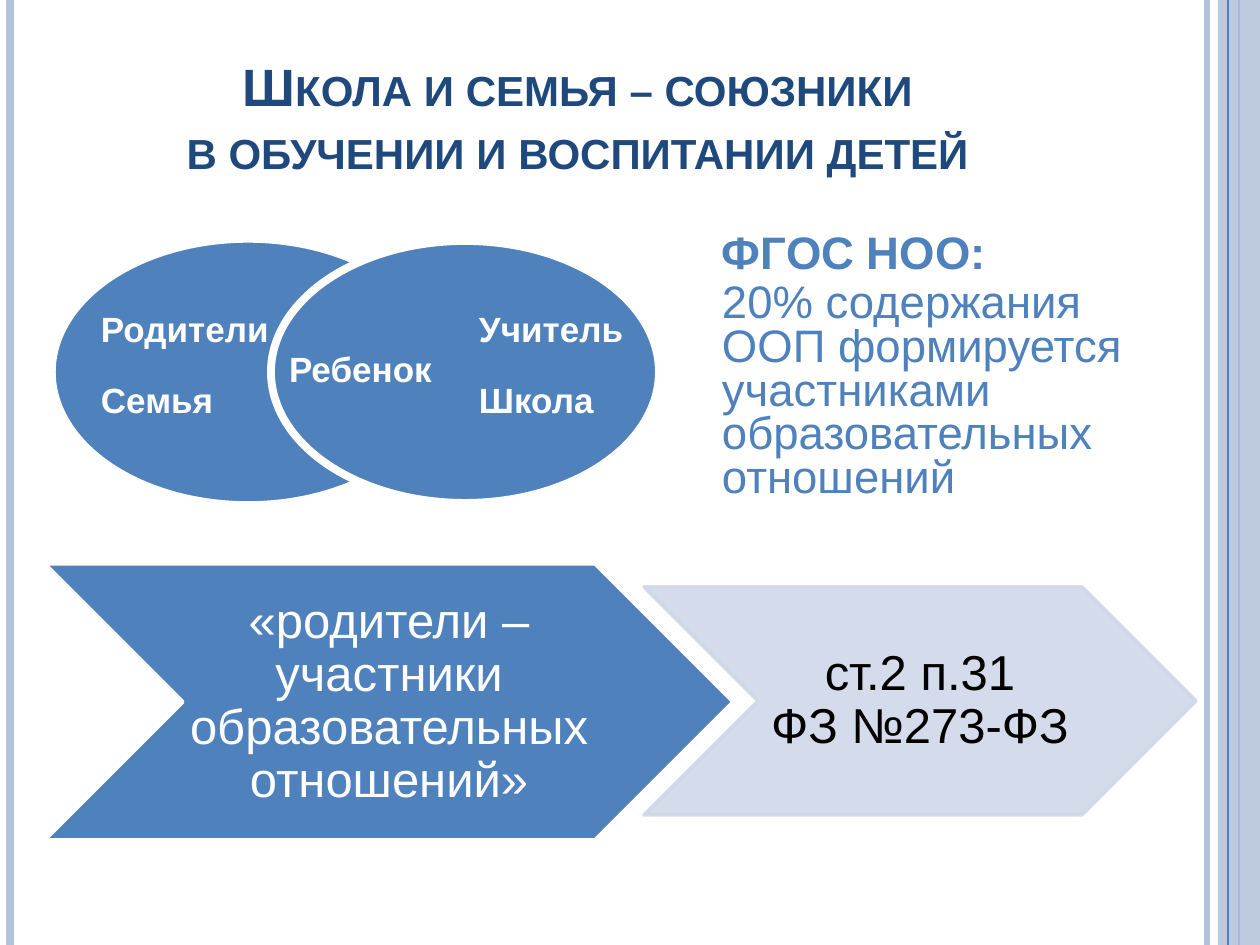
from lxml import etree
from pptx import Presentation
from pptx.dml.color import RGBColor
from pptx.enum.shapes import MSO_CONNECTOR, MSO_SHAPE
from pptx.enum.text import MSO_ANCHOR, PP_ALIGN
from pptx.oxml.ns import qn
from pptx.util import Pt

LEFT, CENTER = PP_ALIGN.LEFT, PP_ALIGN.CENTER
TOP, MIDDLE = MSO_ANCHOR.TOP, MSO_ANCHOR.MIDDLE
STRAIGHT = MSO_CONNECTOR.STRAIGHT
RECTANGLE, OVAL, CHEVRON = MSO_SHAPE.RECTANGLE, MSO_SHAPE.OVAL, MSO_SHAPE.CHEVRON

PX = 914400 / 126
WIDTH, HEIGHT = 1260, 945
COLORS = {
    "blue": "4F81BD",
    "navy": "1F497D",
    "stripe": "B3C1DB",
    "pale": "D0D8E8",
    "white": "FFFFFF",
    "black": "000000",
}


def add_filled(kind, box, fill, line=None, line_width=2, opacity=100):
    """Add a preset shape; box is left, top, width, height in px."""
    shape = slide.shapes.add_shape(kind, *(round(v * PX) for v in box))
    shape.shadow.inherit = False
    shape.fill.solid()
    shape.fill.fore_color.rgb = RGBColor.from_string(COLORS[fill])
    if line:
        shape.line.color.rgb = RGBColor.from_string(COLORS[line])
        shape.line.width = Pt(line_width)
    else:
        shape.line.fill.background()
    if opacity < 100:
        for color in shape._element.spPr.iter(qn("a:srgbClr")):
            etree.SubElement(color, qn("a:alpha"), val=str(opacity * 1000))
    return shape


def write_text(shape, *texts, size, color, bold=(False,), align=LEFT, anchor=TOP,
               spacing=1.0, before=0, margins=(13, 6), wrap=True, small_caps=False):
    """Write one paragraph per text; bold holds one value per paragraph."""
    frame = shape.text_frame
    frame.word_wrap = wrap
    frame.vertical_anchor = anchor
    frame.margin_left = frame.margin_right = round(margins[0] * PX)
    frame.margin_top = frame.margin_bottom = round(margins[1] * PX)
    for index, text in enumerate(texts):
        paragraph = frame.add_paragraph() if index else frame.paragraphs[0]
        paragraph.text = text
        paragraph.alignment = align
        paragraph.line_spacing = spacing
        paragraph.space_before = Pt(before if index else 0)
        for run in paragraph.runs:
            run.font.name = "Arial"
            run.font.size = Pt(size)
            run.font.bold = bold[index]
            run.font.color.rgb = RGBColor.from_string(COLORS[color])
            if small_caps:
                run.font._element.set("cap", "small")


presentation = Presentation()
presentation.slide_width = round(WIDTH * PX)
presentation.slide_height = round(HEIGHT * PX)
slide = presentation.slides.add_slide(presentation.slide_layouts[6])

# Vertical stripes along both edges; the band lies under the last line
for x, color, width in [(1207, "stripe", 3), (10, "stripe", 4.5),
                        (1239, "blue", 1.5), (1228, "blue", 0.75)]:
    if x == 1228:
        add_filled(RECTANGLE, (1218, 0, 42, HEIGHT), "stripe", opacity=87)
    stripe = slide.shapes.add_connector(
        STRAIGHT, round(x * PX), 0, round(x * PX), round(HEIGHT * PX))
    stripe.line.color.rgb = RGBColor.from_string(COLORS[color])
    stripe.line.width = Pt(width)
    etree.SubElement(stripe._element.spPr, qn("a:effectLst"))

title = slide.shapes.add_textbox(*(round(v * PX) for v in (63, 38, 1029, 158)))
write_text(title, "Школа и семья – союзники\nв обучении и воспитании детей",
           size=30, color="navy", bold=(True,), align=CENTER, anchor=MIDDLE,
           small_caps=True)

# Overlapping ovals and their labels
for left, line_width in [(54, 2), (271, 4.5)]:
    add_filled(OVAL, (left, 241, 388, 262), "blue", "white", line_width)

for text, left, top, width in [("Учитель", 466, 301, 171), ("Школа", 466, 372, 141),
                               ("Ребенок", 276, 341, 170), ("Родители", 88, 301, 194),
                               ("Семья", 88, 372, 139)]:
    label = slide.shapes.add_textbox(*(round(v * PX) for v in (left, top, width, 55)))
    write_text(label, text, size=20, color="white", bold=(True,), wrap=False)

standard = slide.shapes.add_textbox(*(round(v * PX) for v in (709, 229, 427, 282)))
write_text(standard, "ФГОС НОО:",
           "20% содержания\nООП формируется участниками образовательных отношений",
           size=26, color="blue", bold=(True, False), spacing=0.8, before=3)

# Chevrons
for text, box, fill, line, opacity, color in [
    ("«родители – участники образовательных отношений»",
     (45, 564, 688, 276), "blue", "white", 100, "white"),
    ("ст.2 п.31\nФЗ №273-ФЗ",
     (644, 587, 552, 228), "pale", "pale", 90, "black"),
]:
    chevron = add_filled(CHEVRON, box, fill, line, opacity=opacity)
    write_text(chevron, text, size=28, color=color, align=CENTER, anchor=MIDDLE,
               spacing=0.9, margins=(5, 3))

presentation.save("out.pptx")
